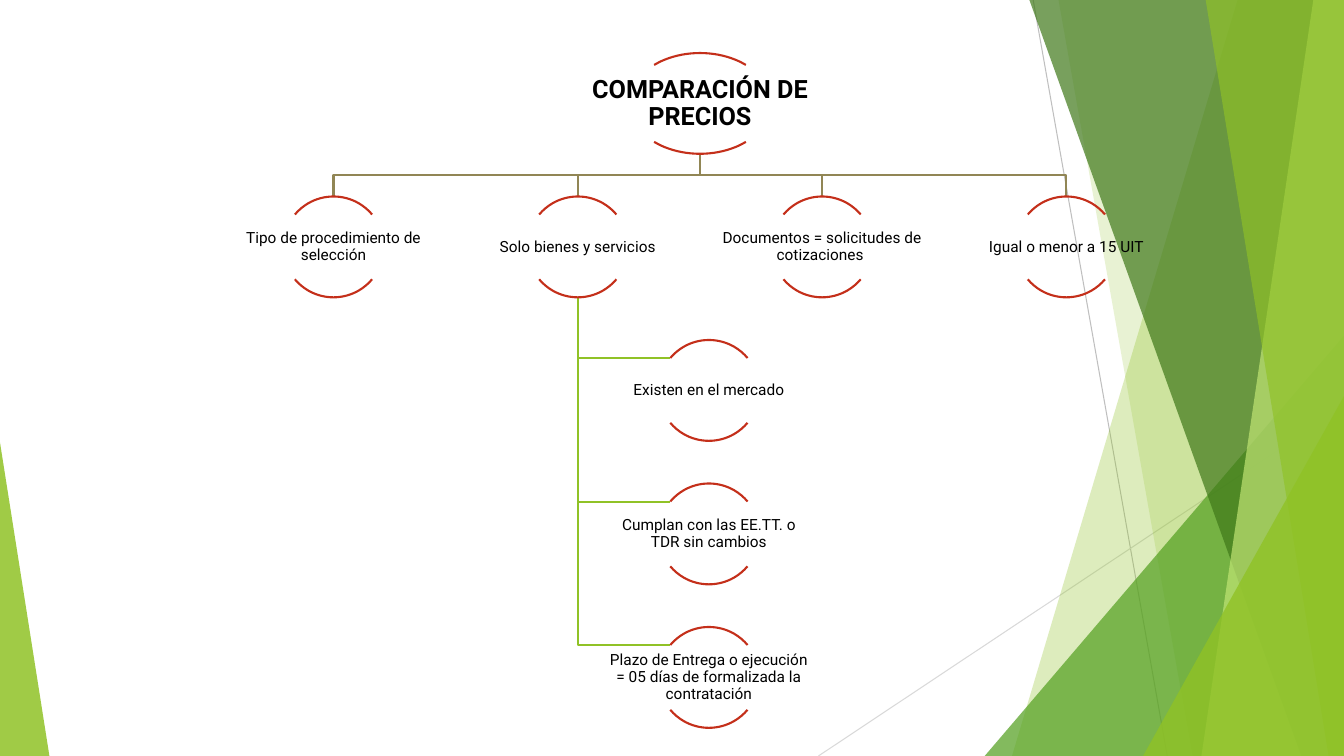
from lxml import etree
from pptx import Presentation
from pptx.dml.color import RGBColor
from pptx.enum.shapes import MSO_CONNECTOR, MSO_SHAPE
from pptx.enum.text import MSO_ANCHOR, MSO_AUTO_SIZE, PP_ALIGN
from pptx.oxml.ns import qn
from pptx.util import Pt

STRAIGHT = MSO_CONNECTOR.STRAIGHT
ARC, TRIANGLE = MSO_SHAPE.ARC, MSO_SHAPE.ISOSCELES_TRIANGLE
CENTER, MIDDLE, NO_FIT = PP_ALIGN.CENTER, MSO_ANCHOR.MIDDLE, MSO_AUTO_SIZE.NONE

BLACK = RGBColor(0x00, 0x00, 0x00)
RED = RGBColor(0xC4, 0x2F, 0x1A)
OLIVE = RGBColor(0x91, 0x86, 0x55)
LIME = RGBColor(0x90, 0xC2, 0x26)
PALE_LIME = RGBColor(0xC0, 0xE4, 0x74)
GREEN = RGBColor(0x54, 0xA0, 0x21)
DARK_GREEN = RGBColor(0x3F, 0x78, 0x19)
GREY = RGBColor(0xBF, 0xBF, 0xBF)
LIGHT_GREY = RGBColor(0xD9, 0xD9, 0xD9)

WIDTH, HEIGHT = 960, 540
ROOT_X, ROOT_Y = 500, 37.9
COL_STEP, ROW_STEP = 174.5, 102.5
NODE = 72
LABEL_W, LABEL_H, LABEL_DY = 144, 46, 13
CHILD_X = 506.4

TOPICS = [
    "Tipo de procedimiento de selección",
    "Solo bienes y servicios",
    "Documentos = solicitudes de cotizaciones ",
    "Igual o menor a 15 UIT",
]
CONDITIONS = [
    "Existen en el mercado",
    "Cumplan con las EE.TT. o TDR sin cambios",
    "Plazo de Entrega o ejecución = 05 días de formalizada la contratación",
]
BANDS = [
    (884.2, WIDTH, WIDTH, 722.9, LIME, 30),
    (756, WIDTH, WIDTH, 851.8, LIME, 20),
]
FRONT_BANDS = [
    (735.1, WIDTH, WIDTH, 929.5, DARK_GREEN, 70),
    (938.2, WIDTH, WIDTH, 858.2, PALE_LIME, 70),
    (861.1, WIDTH, WIDTH, 949, LIME, 65),
]


class Deck:
    """Draws styled elements, measured in points, on the current slide."""

    def __init__(self, font="Roboto", line_width=1.5):
        self.font, self.line_width = font, line_width
        self.prs = Presentation()
        self.prs.slide_width, self.prs.slide_height = Pt(WIDTH), Pt(HEIGHT)
        self.s = self.prs.slides.add_slide(self.prs.slide_layouts[5])

    def fill(self, sp, color, alpha):
        sp.shadow.inherit = False
        sp.line.fill.background()
        sp.fill.solid()
        sp.fill.fore_color.rgb = color
        clr = sp.fill._xPr.find(qn("a:solidFill"))[0]
        etree.SubElement(clr, qn("a:alpha"), val=str(alpha * 1000))

    def outline(self, sp, color):
        sp.shadow.inherit = False
        sp.fill.background()
        sp.line.color.rgb = color
        sp.line.width = Pt(self.line_width)

    def line(self, x1, y1, x2, y2, color):
        cx = self.s.shapes.add_connector(STRAIGHT, Pt(x1), Pt(y1), Pt(x2), Pt(y2))
        cx.line.color.rgb = color
        cx.line.width = Pt(0.75)
        etree.SubElement(cx._element.spPr, qn("a:effectLst"))

    def freeform(self, points, close):
        pts = [(Pt(x), Pt(y)) for x, y in points]
        fb = self.s.shapes.build_freeform(*pts[0])
        fb.add_line_segments(pts[1:], close=close)
        return fb.convert_to_shape()

    def band(self, top_left, top_right, bottom_right, bottom_left, color, alpha):
        points = [(top_left, -0.6), (top_right, -0.6),
                  (bottom_right, HEIGHT), (bottom_left, HEIGHT)]
        self.fill(self.freeform(points, True), color, alpha)

    def triangle(self, x, y, w, apex, color, alpha):
        sp = self.s.shapes.add_shape(TRIANGLE, Pt(x), Pt(y), Pt(w), Pt(HEIGHT - y))
        sp.adjustments[0] = apex
        self.fill(sp, color, alpha)

    def elbow(self, points, color):
        self.outline(self.freeform(points, False), color)

    def text(self, sp, text, x, y, w, h, size, bold):
        sp.left, sp.top, sp.width, sp.height = Pt(x), Pt(y), Pt(w), Pt(h)
        tf = sp.text_frame
        tf.word_wrap, tf.auto_size, tf.vertical_anchor = True, NO_FIT, MIDDLE
        tf.margin_left = tf.margin_right = tf.margin_top = tf.margin_bottom = Pt(0.7)
        p = tf.paragraphs[0]
        p.alignment, p.line_spacing = CENTER, 0.9
        r = p.add_run()
        r.text = text
        r.font.name, r.font.size, r.font.bold = self.font, Pt(size), bold
        r.font.color.rgb = BLACK

    def node(self, text, cx, y, w=NODE, label_w=LABEL_W, size=11, title=False):
        for start, end in ((132, 192), (24, 84)):
            sp = self.s.shapes.add_shape(ARC, Pt(cx - w / 2), Pt(y), Pt(w), Pt(NODE))
            sp.adjustments[0], sp.adjustments[1] = start, end
            self.outline(sp, RED)
        sp = self.s.shapes.title if title else self.s.shapes.add_textbox(0, 0, 0, 0)
        self.text(sp, text, cx - label_w / 2, y + LABEL_DY, label_w, LABEL_H, size, title)


def main():
    deck = Deck()
    deck.line(738, 0, 833.8, HEIGHT, GREY)
    deck.line(WIDTH, 290.2, 584.6, HEIGHT, LIGHT_GREY)
    for band in BANDS:
        deck.band(*band)
    deck.triangle(703.4, 239.8, 256.6, 1, GREEN, 72)
    for band in FRONT_BANDS:
        deck.band(*band)
    deck.triangle(816.5, 283, 143.5, 1, LIME, 80)
    deck.triangle(0, 316.1, 35.3, 0, LIME, 85)

    topic_y = ROOT_Y + ROW_STEP
    topic_xs = [ROOT_X + (i - 1.5) * COL_STEP for i in range(len(TOPICS))]
    condition_ys = [topic_y + (i + 1) * ROW_STEP for i in range(len(CONDITIONS))]
    root_end = ROOT_Y + NODE
    bus_y = (root_end + topic_y) / 2
    for x in topic_xs:
        deck.elbow([(ROOT_X, root_end), (ROOT_X, bus_y), (x, bus_y), (x, topic_y)], OLIVE)
    trunk_x = topic_xs[1]
    for y in condition_ys:
        join_y = y + LABEL_DY
        deck.elbow([(trunk_x, topic_y + NODE), (trunk_x, join_y), (478.8, join_y)], LIME)

    deck.node("COMPARACIÓN DE PRECIOS", ROOT_X, ROOT_Y,
              w=101.5, label_w=203, size=18, title=True)
    for text, x in zip(TOPICS, topic_xs):
        deck.node(text, x, topic_y)
    for text, y in zip(CONDITIONS, condition_ys):
        deck.node(text, CHILD_X, y)
    deck.prs.save("out.pptx")


if __name__ == "__main__":
    main()
